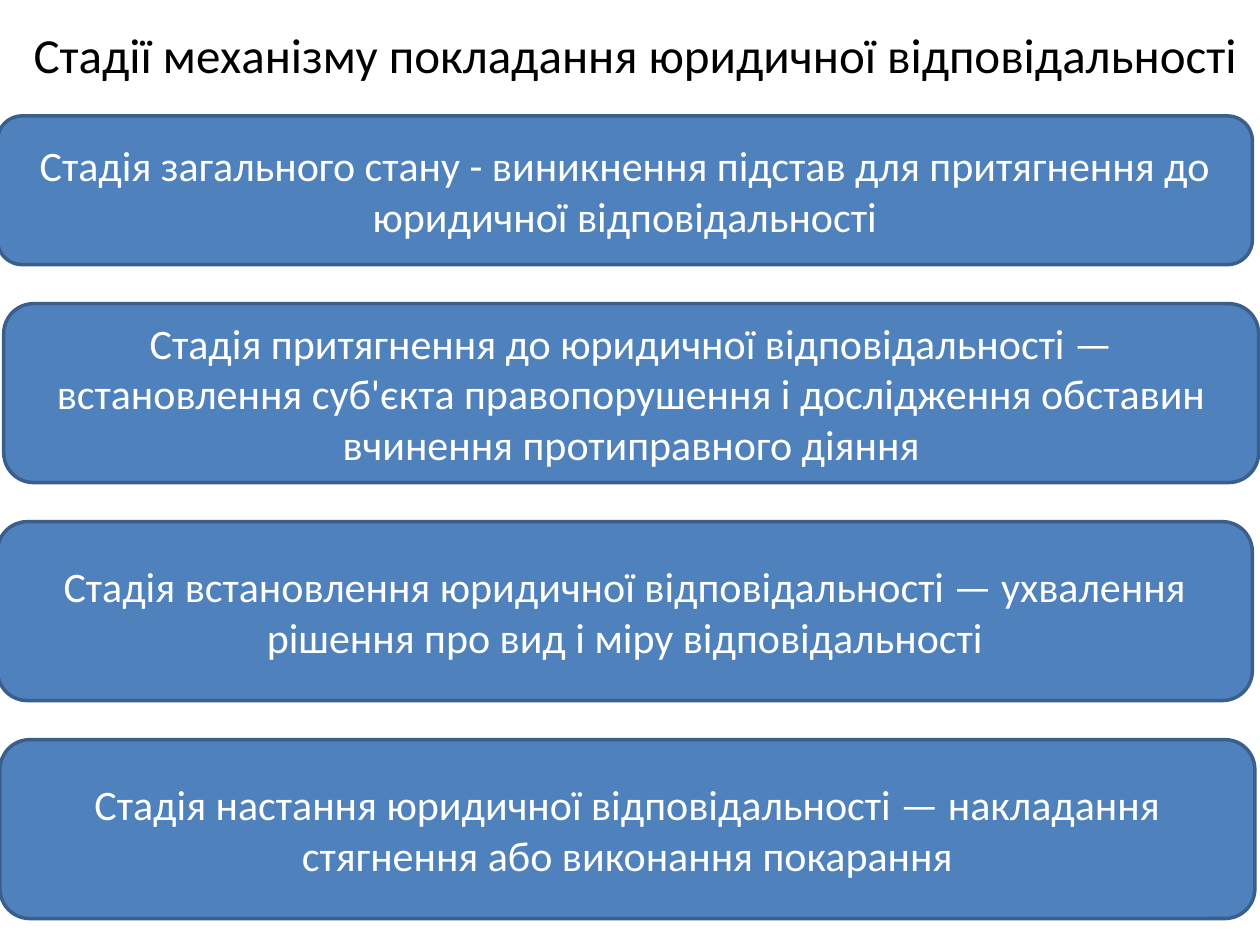
from pptx import Presentation
from pptx.dml.color import RGBColor
from pptx.enum.shapes import MSO_SHAPE
from pptx.enum.text import MSO_ANCHOR, PP_ALIGN
from pptx.util import Inches, Pt

COLORS = {"page": "FFFFFF", "title": "000000", "stage": "4F81BD",
          "border": "3A5F8C", "stage_text": "FFFFFF"}
FONT = "Calibri"
PAGE_WIDTH, PAGE_HEIGHT = 10, 7.5
STAGE_WIDTH = 0.996 * PAGE_WIDTH
STAGE_TOP, STAGE_GAP = 0.92, 0.31

TITLE = "Стадії механізму покладання юридичної відповідальності"
# Left edge, height and wording of each stage, from top to bottom
STAGES = [
    (-0.02, 1.18, "Стадія загального стану - виникнення підстав для "
                  "притягнення до юридичної відповідальності"),
    (0.03, 1.42, "Стадія притягнення до юридичної відповідальності — "
                 "встановлення суб'єкта правопорушення і дослідження "
                 "обставин вчинення протиправного діяння"),
    (-0.02, 1.42, "Стадія встановлення юридичної відповідальності — "
                  "ухвалення рішення про вид і міру відповідальності"),
    (0, 1.42, "Стадія настання юридичної відповідальності — "
              "накладання стягнення або виконання покарання"),
]


def color(name):
    return RGBColor.from_string(COLORS[name])


def write_text(box, text, *, size, ink, spacing=1.0):
    frame = box.text_frame
    frame.word_wrap = True
    frame.vertical_anchor = MSO_ANCHOR.MIDDLE
    para = frame.paragraphs[0]
    para.alignment = PP_ALIGN.CENTER
    para.line_spacing = spacing
    span = para.add_run()
    span.text = text
    span.font.name = FONT
    span.font.size = Pt(size)
    span.font.color.rgb = color(ink)


def add_title(page, text):
    box = page.shapes.add_textbox(Inches(0.04), Inches(0.13),
                                  Inches(PAGE_WIDTH), Inches(0.69))
    write_text(box, text, size=28, ink="title", spacing=0.8)


def add_stage(page, left, top, height, text):
    box = page.shapes.add_shape(MSO_SHAPE.ROUNDED_RECTANGLE, Inches(left),
                                Inches(top), Inches(STAGE_WIDTH), Inches(height))
    box.shadow.inherit = False
    box.fill.solid()
    box.fill.fore_color.rgb = color("stage")
    box.line.color.rgb = color("border")
    box.line.width = Pt(2)
    write_text(box, text, size=24, ink="stage_text")


def main():
    deck = Presentation()
    deck.slide_width, deck.slide_height = Inches(PAGE_WIDTH), Inches(PAGE_HEIGHT)
    page = deck.slides.add_slide(deck.slide_layouts[6])
    page.background.fill.solid()
    page.background.fill.fore_color.rgb = color("page")

    # Heading
    add_title(page, TITLE)

    # Stages stacked with equal gaps
    top = STAGE_TOP
    for left, height, text in STAGES:
        add_stage(page, left, top, height, text)
        top += height + STAGE_GAP

    deck.save("out.pptx")


if __name__ == "__main__":
    main()
